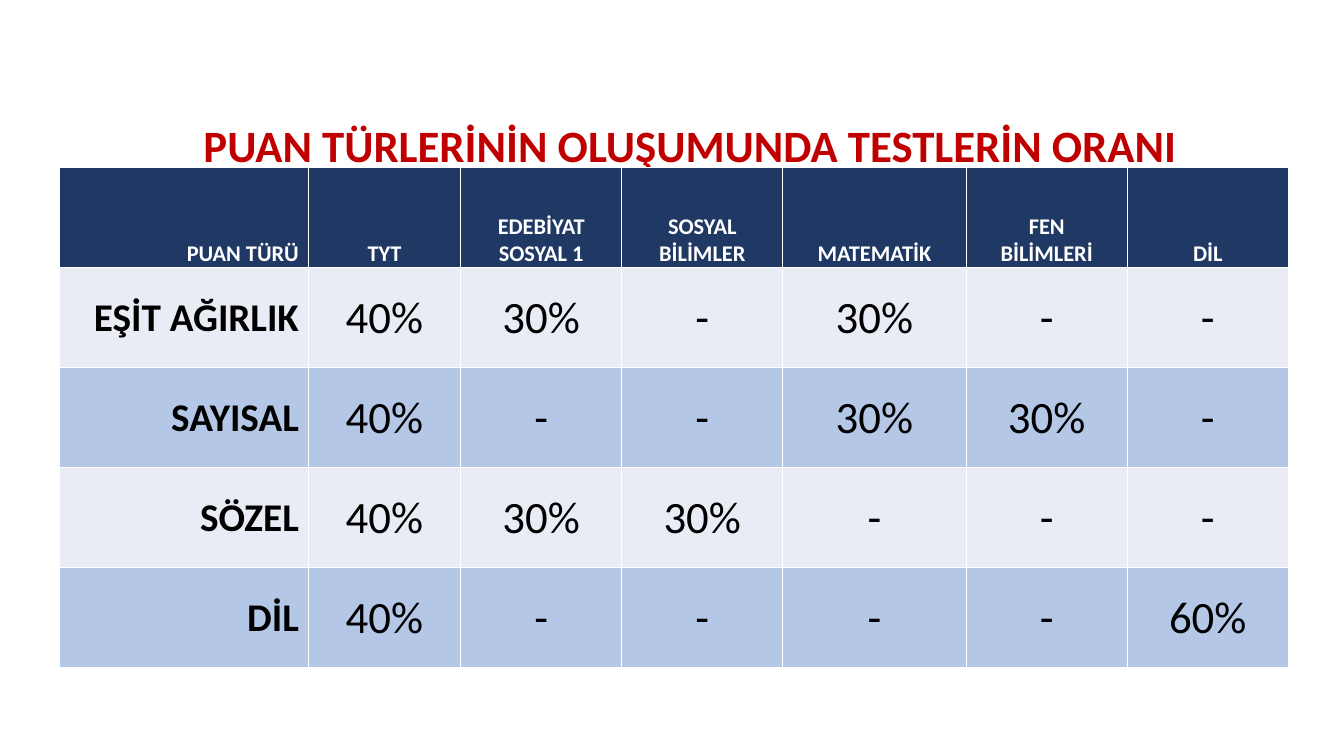
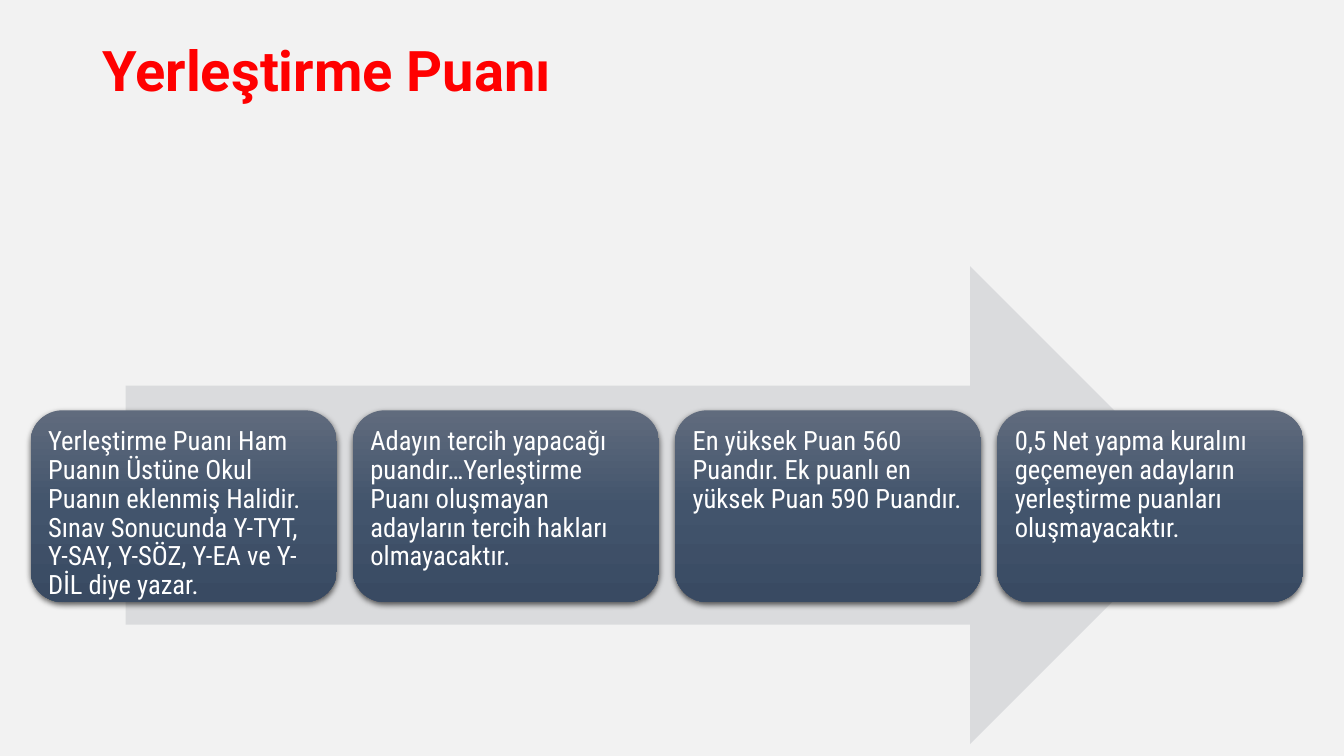
"""Builds two slides on exam score types: a table of test weights and a row of placement score facts."""
from dataclasses import dataclass

from lxml import etree
from pptx import Presentation
from pptx.dml.color import RGBColor
from pptx.enum.shapes import MSO_SHAPE
from pptx.enum.text import MSO_ANCHOR, PP_ALIGN
from pptx.oxml.ns import qn
from pptx.presentation import Presentation as Deck
from pptx.shapes.autoshape import Shape
from pptx.slide import Slide
from pptx.table import _Cell as Cell
from pptx.text.text import TextFrame
from pptx.util import Cm, Pt

LEFT, CENTER, RIGHT = PP_ALIGN.LEFT, PP_ALIGN.CENTER, PP_ALIGN.RIGHT
TOP, MIDDLE, BOTTOM = MSO_ANCHOR.TOP, MSO_ANCHOR.MIDDLE, MSO_ANCHOR.BOTTOM
ROUNDED, ARROW = MSO_SHAPE.ROUNDED_RECTANGLE, MSO_SHAPE.RIGHT_ARROW
BLANK_LAYOUT = 6


@dataclass(frozen=True)
class TextStyle:
    font: str
    size: int
    color: str
    bold: bool = False
    align: PP_ALIGN = LEFT
    anchor: MSO_ANCHOR = MIDDLE
    spacing: float = 1.0


@dataclass(frozen=True)
class Box:
    left: float
    top: float
    width: float
    height: float

    def lengths(self) -> tuple[Cm, Cm, Cm, Cm]:
        return Cm(self.left), Cm(self.top), Cm(self.width), Cm(self.height)


@dataclass(frozen=True)
class Theme:
    white: str = "FFFFFF"
    pale_gray: str = "F2F2F2"
    header_fill: str = "203864"
    row_fills: tuple[str, str] = ("E9EBF5", "B4C7E7")
    arrow_fill: str = "CFD1D4"
    arrow_opacity: int = 68
    card_gradient: tuple[tuple[int, str], ...] = ((0, "606B7D"), (50, "42546C"), (100, "394A62"))
    shadow_color: str = "000000"
    shadow_opacity: int = 63
    ratio_title: TextStyle = TextStyle("Calibri", 32, "C00000", True, CENTER, spacing=0.9)
    placement_title: TextStyle = TextStyle("Roboto", 40, "FF0000", True, spacing=0.9)
    corner: TextStyle = TextStyle("Calibri", 16, "FFFFFF", True, RIGHT, BOTTOM)
    header: TextStyle = TextStyle("Calibri", 16, "FFFFFF", True, CENTER, BOTTOM)
    score_type: TextStyle = TextStyle("Calibri", 28, "000000", True, RIGHT)
    ratio: TextStyle = TextStyle("Calibri", 32, "000000", align=CENTER)
    card: TextStyle = TextStyle("Roboto Condensed", 19, "FFFFFF", anchor=TOP, spacing=0.9)


@dataclass(frozen=True)
class ScoreType:
    name: str
    ratios: tuple[str, ...]


THEME = Theme()
COLUMN_WIDTHS = (6.27, 3.84, 4.06, 4.06, 4.62, 4.06, 4.06)
ROW_HEIGHT = 2.52
HEADERS = (
    "PUAN TÜRÜ", "TYT", "EDEBİYAT\nSOSYAL 1", "SOSYAL\nBİLİMLER",
    "MATEMATİK", "FEN\nBİLİMLERİ", "DİL",
)
SCORE_TYPES = (
    ScoreType("EŞİT AĞIRLIK", ("40%", "30%", "-", "30%", "-", "-")),
    ScoreType("SAYISAL", ("40%", "-", "-", "30%", "30%", "-")),
    ScoreType("SÖZEL", ("40%", "30%", "30%", "-", "-", "-")),
    ScoreType("DİL", ("40%", "-", "-", "-", "-", "60%")),
)
FIRST_CARD = Box(0.77, 10.34, 7.72, 4.83)
CARD_GAP = 0.4
CARD_INSET = 0.21
FACTS = (
    "Yerleştirme Puanı Ham Puanın Üstüne Okul Puanın eklenmiş Halidir. "
    "Sınav Sonucunda Y-TYT, Y-SAY, Y-SÖZ, Y-EA ve Y-DİL diye yazar.",
    "Adayın tercih yapacağı puandır…Yerleştirme Puanı oluşmayan "
    "adayların tercih hakları olmayacaktır.",
    "En yüksek Puan 560 Puandır. Ek puanlı en yüksek Puan 590 Puandır.",
    "0,5 Net yapma kuralını geçemeyen adayların yerleştirme puanları oluşmayacaktır.",
)


def add_color(parent: etree._Element, color: str, opacity: int = 100) -> None:
    srgb = etree.SubElement(parent, qn("a:srgbClr"), val=color)
    if opacity < 100:
        etree.SubElement(srgb, qn("a:alpha"), val=str(opacity * 1000))


def write(frame: TextFrame, text: str, style: TextStyle) -> None:
    frame.word_wrap = True
    paragraph = frame.paragraphs[0]
    paragraph.text = text
    paragraph.alignment = style.align
    paragraph.line_spacing = style.spacing
    font = paragraph.font
    font.name, font.size, font.bold = style.font, Pt(style.size), style.bold
    font.color.rgb = RGBColor.from_string(style.color)


def add_slide(deck: Deck, background: str) -> Slide:
    slide = deck.slides.add_slide(deck.slide_layouts[BLANK_LAYOUT])
    fill = slide.background.fill
    fill.solid()
    fill.fore_color.rgb = RGBColor.from_string(background)
    return slide


def add_title(slide: Slide, text: str, box: Box, style: TextStyle) -> None:
    frame = slide.shapes.add_textbox(*box.lengths()).text_frame
    frame.vertical_anchor = style.anchor
    write(frame, text, style)


def fill_cell(cell: Cell, text: str, fill: str, style: TextStyle) -> None:
    cell.fill.solid()
    cell.fill.fore_color.rgb = RGBColor.from_string(fill)
    cell.vertical_anchor = style.anchor
    cell.margin_left = cell.margin_top = Cm(0.03)
    cell.margin_right = Cm(0.24 if style.align == RIGHT else 0.03)
    cell.margin_bottom = 0
    write(cell.text_frame, text, style)
    properties = cell._tc.get_or_add_tcPr()
    for position, side in enumerate(("lnL", "lnR", "lnT", "lnB")):
        border = etree.Element(qn(f"a:{side}"), w=str(Pt(1)))
        add_color(etree.SubElement(border, qn("a:solidFill")), THEME.white)
        properties.insert(position, border)


def add_ratio_table(slide: Slide) -> None:
    row_count = len(SCORE_TYPES) + 1
    box = Box(1.5, 4.22, sum(COLUMN_WIDTHS), row_count * ROW_HEIGHT)
    table = slide.shapes.add_table(row_count, len(HEADERS), *box.lengths()).table
    table.horz_banding = False
    for column, width in zip(table.columns, COLUMN_WIDTHS):
        column.width = Cm(width)
    for row in table.rows:
        row.height = Cm(ROW_HEIGHT)
    for column, heading in enumerate(HEADERS):
        style = THEME.header if column else THEME.corner
        fill_cell(table.cell(0, column), heading, THEME.header_fill, style)
    for row, score in enumerate(SCORE_TYPES, start=1):
        fill = THEME.row_fills[(row - 1) % 2]
        for column, text in enumerate((score.name, *score.ratios)):
            style = THEME.ratio if column else THEME.score_type
            fill_cell(table.cell(row, column), text, fill, style)


def add_plain_shape(slide: Slide, kind: MSO_SHAPE, box: Box) -> Shape:
    shape = slide.shapes.add_shape(kind, *box.lengths())
    shape.shadow.inherit = False
    shape.line.fill.background()
    return shape


def add_arrow(slide: Slide) -> None:
    arrow = add_plain_shape(slide, ARROW, Box(3.17, 6.71, 27.3, 12.04))
    arrow.fill.solid()
    arrow.fill.fore_color.rgb = RGBColor.from_string(THEME.arrow_fill)
    color = arrow._element.spPr.find(qn("a:solidFill")).find(qn("a:srgbClr"))
    etree.SubElement(color, qn("a:alpha"), val=str(THEME.arrow_opacity * 1000))


def add_card(slide: Slide, text: str, box: Box) -> None:
    card = add_plain_shape(slide, ROUNDED, box)
    card.fill.gradient()
    card.fill.gradient_angle = 270
    properties = card._element.spPr
    stops = properties.find(qn("a:gradFill")).find(qn("a:gsLst"))
    for default_stop in list(stops):
        stops.remove(default_stop)
    for percent, color in THEME.card_gradient:
        add_color(etree.SubElement(stops, qn("a:gs"), pos=str(percent * 1000)), color)
    shadow = etree.SubElement(
        properties.find(qn("a:effectLst")), qn("a:outerShdw"),
        blurRad=str(Pt(4.5)), dist=str(Pt(1.5)), dir="5400000", rotWithShape="0",
    )
    add_color(shadow, THEME.shadow_color, THEME.shadow_opacity)
    frame = card.text_frame
    frame.vertical_anchor = THEME.card.anchor
    frame.margin_left = frame.margin_right = Cm(CARD_INSET)
    frame.margin_top = frame.margin_bottom = Cm(CARD_INSET)
    write(frame, text, THEME.card)


def build_ratio_slide(deck: Deck) -> None:
    slide = add_slide(deck, THEME.white)
    add_title(slide, "PUAN TÜRLERİNİN OLUŞUMUNDA TESTLERİN ORANI",
              Box(1.88, 2.82, 31.04, 1.83), THEME.ratio_title)
    add_ratio_table(slide)


def build_placement_slide(deck: Deck) -> None:
    slide = add_slide(deck, THEME.pale_gray)
    add_arrow(slide)
    first = FIRST_CARD
    for index, fact in enumerate(FACTS):
        left = first.left + index * (first.width + CARD_GAP)
        add_card(slide, fact, Box(left, first.top, first.width, first.height))
    add_title(slide, "Yerleştirme Puanı", Box(2.34, 0, 29.21, 3.68), THEME.placement_title)


def main() -> None:
    deck = Presentation()
    deck.slide_width, deck.slide_height = Cm(33.87), Cm(19.05)
    build_ratio_slide(deck)
    build_placement_slide(deck)
    deck.save("out.pptx")


if __name__ == "__main__":
    main()
